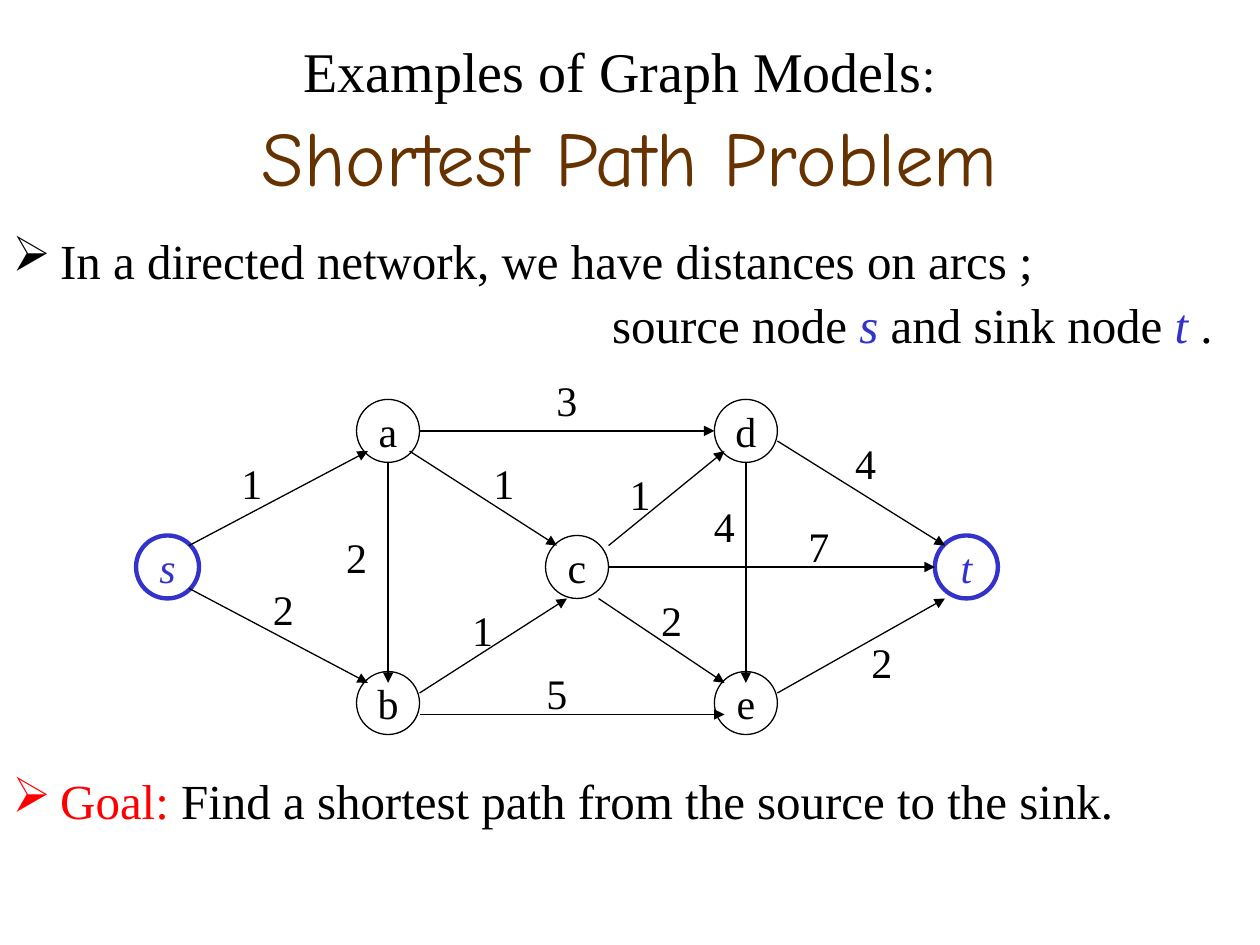
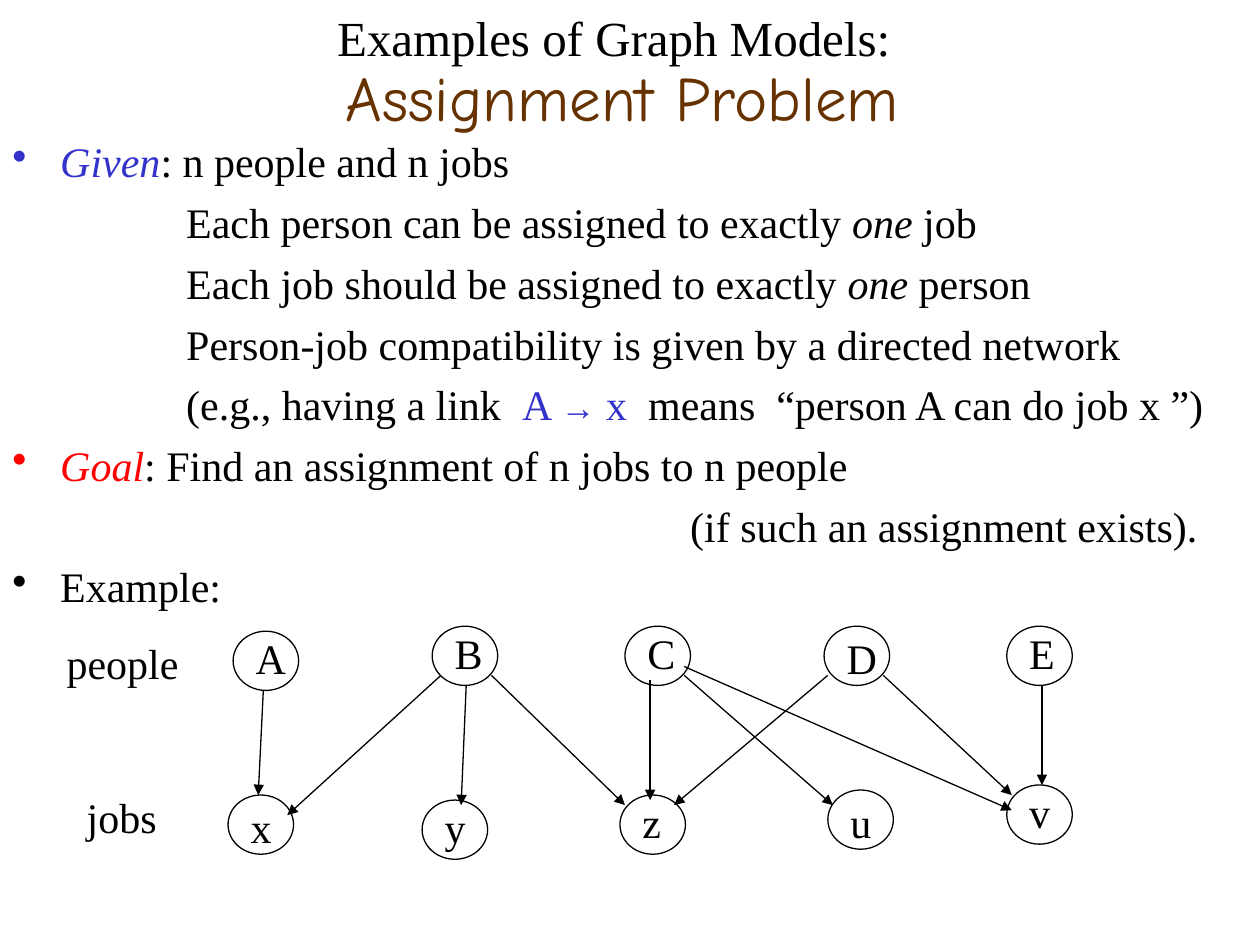
from lxml import etree
from pptx import Presentation
from pptx import util as u
from pptx.dml.color import RGBColor
from pptx.enum import shapes, text
from pptx.oxml.ns import qn

SERIF, CASUAL = "Times New Roman", "Comic Neue"
BLACK, WHITE, BLUE, RED, BROWN = "000000", "FFFFFF", "3333CC", "FF0000", "663300"
CENTER, LEFT = text.PP_ALIGN.CENTER, text.PP_ALIGN.LEFT
MIDDLE = text.MSO_ANCHOR.MIDDLE
HANG = 0.38


def rgb(hex_color):
    return RGBColor.from_string(hex_color)


def add_run(p, words, size, color=BLACK, italic=False, font=SERIF):
    r = p.add_run()
    r.text = words
    for name, value in dict(size=u.Pt(size), name=font, italic=italic).items():
        setattr(r.font, name, value)
    r.font.color.rgb = rgb(color)


def add_box(s, x, y, w, h, **frame_format):
    tf = s.shapes.add_textbox(*map(u.Inches, (x, y, w, h))).text_frame
    tf.word_wrap = True
    for name, value in frame_format.items():
        setattr(tf, name, value)
    return tf


def add_title(s, box, problem, sizes, line_spacing=1.0):
    """sizes: heading, its colon, the space that ends the line, problem name."""
    heading, colon, gap, name = sizes
    p = add_box(s, *box, vertical_anchor=MIDDLE).paragraphs[0]
    p.alignment, p.line_spacing = CENTER, line_spacing
    add_run(p, "Examples of Graph Models", heading)
    add_run(p, ":", colon)
    add_run(p, " ", gap)
    p.add_line_break()
    add_run(p, problem, name, BROWN, font=CASUAL)


def add_body(s, box, paragraphs, size, line_spacing=1.0):
    """paragraphs: (bullet or None, left margin, space before, runs)."""
    tf = add_box(s, *box)
    for i, (bullet, margin, before, runs) in enumerate(paragraphs):
        p = tf.add_paragraph() if i else tf.paragraphs[0]
        p.line_spacing, p.space_before = line_spacing, u.Pt(before)
        pPr = p._p.get_or_add_pPr()
        pPr.set("marL", str(u.Inches(margin)))
        if bullet:
            pPr.set("indent", str(-u.Inches(HANG)))
            etree.SubElement(pPr, qn("a:buChar")).set("char", bullet)
        for words, *style in runs:
            run_size = 20 if words == "→" else size
            add_run(p, words, run_size, *style)


def add_node(s, x, y, w, h, color=BLACK, weight=0.75):
    sp = s.shapes.add_shape(shapes.MSO_SHAPE.OVAL, *map(u.Inches, (x, y, w, h)))
    sp.shadow.inherit = False
    sp.fill.solid()
    sp.fill.fore_color.rgb = rgb(WHITE)
    sp.line.color.rgb = rgb(color)
    sp.line.width = u.Pt(weight)
    return sp.text_frame


def add_arrow(s, x1, y1, x2, y2):
    line = s.shapes.add_connector(
        shapes.MSO_CONNECTOR.STRAIGHT, *map(u.Inches, (x1, y1, x2, y2)))
    line.line.color.rgb = rgb(BLACK)
    line.line.width = u.Pt(0.75)
    etree.SubElement(line.line._get_or_add_ln(), qn("a:tailEnd")).set("type", "triangle")
    etree.SubElement(line._element.spPr, qn("a:effectLst"))


def add_label(s, x, y, w, words, align=LEFT):
    p = add_box(s, x, y, w, 0.5).paragraphs[0]
    p.alignment, p.space_before = align, u.Pt(2)
    add_run(p, words, 24)


NETWORK_NODES = {
    "s": (0.08, 1.25), "b": (1.83, 2.33), "a": (1.83, 0.17), "d": (4.67, 0.17),
    "e": (4.67, 2.33), "t": (6.42, 1.25), "c": (3.33, 1.25),
}
# start, end, distance, corner of the distance label
NETWORK_ARCS = [
    (0.5, 1.33, 1.92, 0.58, "1", 0.75, 0.58),
    (0.5, 1.67, 1.92, 2.42, "2", 1, 1.58),
    (2.33, 0.42, 4.67, 0.42, "3", 3.25, -0.08),
    (5.17, 0.5, 6.5, 1.33, "4", 5.62, 0.42),
    (2.25, 0.58, 3.42, 1.33, "1", 2.75, 0.58),
    (3.83, 1.33, 4.75, 0.58, "1", 3.83, 0.67),
    (3.75, 1.75, 4.75, 2.42, "2", 4.08, 1.67),
    (2.33, 2.5, 3.5, 1.75, "1", 2.58, 1.75),
    (5.17, 2.5, 6.5, 1.75, "2", 5.75, 2),
    (2.33, 2.67, 4.75, 2.67, "5", 3.17, 2.25),
    (2.08, 0.67, 2.08, 2.42, "2", 1.58, 1.17),
    (4.92, 0.67, 4.92, 2.42, "4", 4.5, 0.92),
    (3.83, 1.5, 6.42, 1.5, "7", 5.25, 1.08),
]


def add_network(s, left, top):
    for name, (x, y) in NETWORK_NODES.items():
        terminal = name in "st"
        color, weight = (BLUE, 2.5) if terminal else (BLACK, 0.75)
        tf = add_node(s, left + x, top + y, 0.5, 0.5, color, weight)
        tf.word_wrap, tf.vertical_anchor = False, MIDDLE
        p = tf.paragraphs[0]
        p.alignment = CENTER
        add_run(p, name, 24, color, terminal)
    for x1, y1, x2, y2, *_ in NETWORK_ARCS:
        add_arrow(s, left + x1, top + y1, left + x2, top + y2)
    for *_, distance, x, y in NETWORK_ARCS:
        add_label(s, left + x, top + y, 0.5, distance, CENTER)


# left, top, rise of the letter above the top of its node
MATCHING_NODES = {
    "A": (1.85, 0.01, 0.04), "B": (3.43, -0.03, 0.04), "C": (4.96, -0.03, 0.04),
    "D": (6.54, -0.03, 0), "E": (7.99, -0.03, 0.04),
    "x": (1.81, 1.31, 0), "y": (3.35, 1.35, 0.04), "z": (4.92, 1.31, 0.04),
    "u": (6.57, 1.27, 0), "v": (7.99, 1.23, 0.04),
}
MATCHING_LINKS = [
    (2.09, 0.48, 2.05, 1.31), (3.5, 0.36, 2.28, 1.47), (3.7, 0.44, 3.66, 1.39),
    (3.9, 0.36, 4.96, 1.39), (5.16, 0.4, 5.16, 1.35), (5.43, 0.36, 6.61, 1.39),
    (6.57, 0.36, 5.35, 1.39), (8.27, 0.44, 8.27, 1.23), (7.01, 0.36, 8.03, 1.31),
    (5.43, 0.29, 8.03, 1.43),
]


def add_matching(s, left, top):
    for x, y, _ in MATCHING_NODES.values():
        add_node(s, left + x, top + y, 0.52, 0.47)
    for name, (x, y, rise) in MATCHING_NODES.items():
        add_label(s, left + x + 0.08, top + y - rise, 0.39, name)
    add_label(s, left + 0.43, top + 0.01, 1.34, "people")
    add_label(s, left + 0.59, top + 1.23, 0.87, "jobs")
    for x1, y1, x2, y2 in MATCHING_LINKS:
        add_arrow(s, left + x1, top + y1, left + x2, top + y2)


def shortest_path_slide(s):
    add_title(s, (0.75, 0, 8.5, 1.67), "Shortest Path Problem", (32, 28, 48, 44))
    add_body(s, (0, 1.83, 10, 5.17), [
        ("➢", HANG, 4, [("In a directed network, we have distances on arcs ;",)]),
        (None, 4.76, 6.4, [("source node ",), ("s", BLUE, True), (" and sink node ",),
                           ("t", BLUE, True), (" .",)]),
        ("➢", HANG, 242, [("Goal:", RED),
                          (" Find a shortest path from the source to the sink.",)]),
    ], 28, 0.9)
    add_network(s, 1, 3)


def assignment_slide(s):
    add_title(s, (0.47, 0.21, 8.94, 0.64), "Assignment Problem", (28, 28, 40, 36), 0.85)
    rule, gap = 1.38, 5.9
    add_body(s, (0, 1.03, 10, 6.47), [
        ("•", HANG, 3, [("Given", BLUE, True), (": n people and n jobs",)]),
        (None, rule, gap, [("Each person can be assigned to exactly ",),
                           ("one", BLACK, True), (" job",)]),
        (None, rule, gap, [("Each job should be assigned to exactly ",),
                           ("one", BLACK, True), (" person",)]),
        (None, rule, gap, [("Person-job compatibility is given by a directed network",)]),
        (None, rule, gap, [("(e.g., having a link  ",), ("A ", BLUE), ("→", BLUE),
                           (" x", BLUE), ("  means  “person A can do job x ”)",)]),
        ("•", HANG, gap, [("Goal", RED, True),
                          (": Find an assignment of n jobs to n people",)]),
        (None, 5.38, gap, [("(if such an assignment exists).",)]),
        ("•", HANG, gap, [("Example:",)]),
    ], 24)
    add_matching(s, 0, 5)


def main():
    prs = Presentation()
    prs.slide_width, prs.slide_height = u.Inches(10), u.Inches(7.5)
    for build in (shortest_path_slide, assignment_slide):
        build(prs.slides.add_slide(prs.slide_layouts[6]))
    prs.save("out.pptx")


if __name__ == "__main__":
    main()
